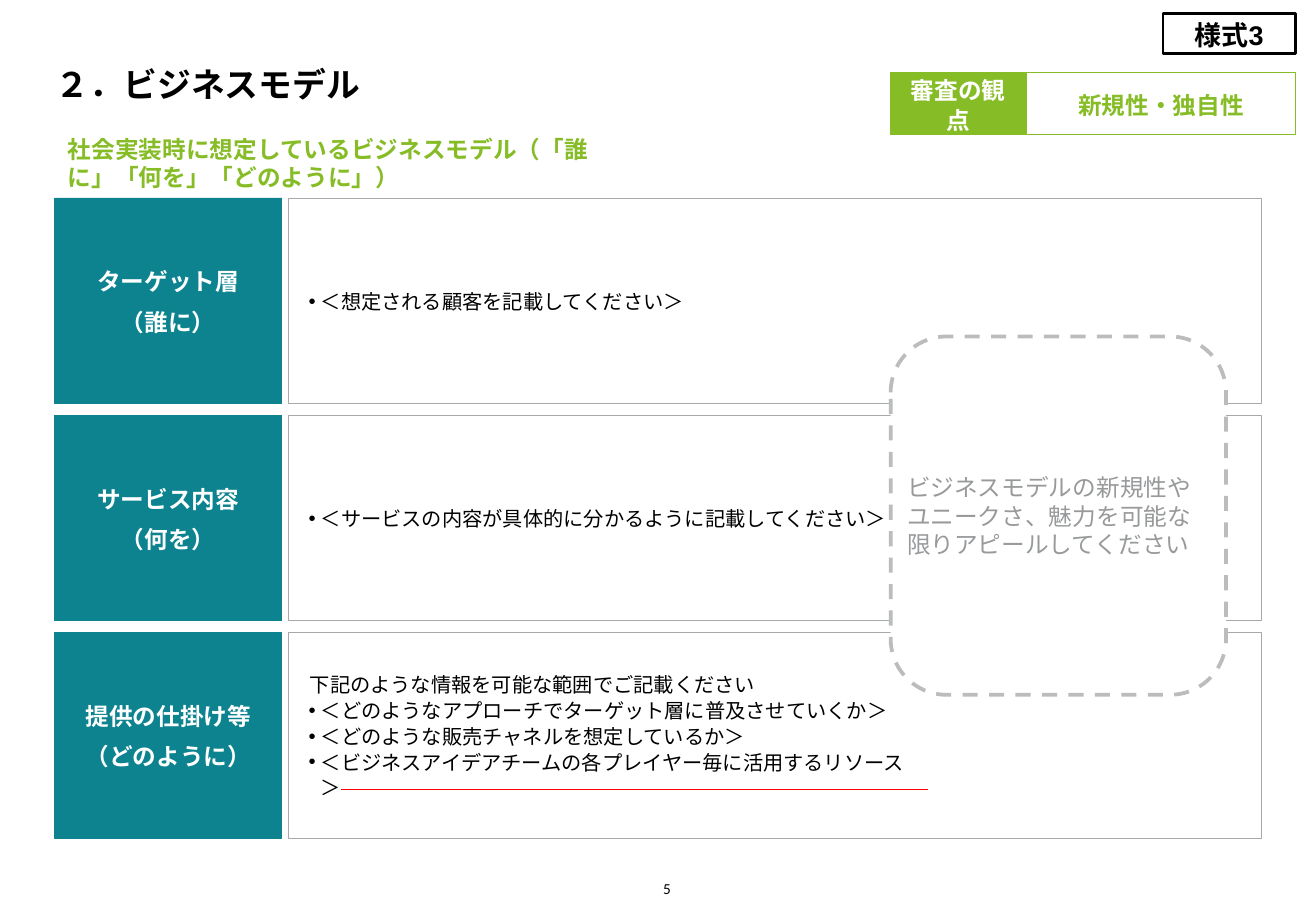
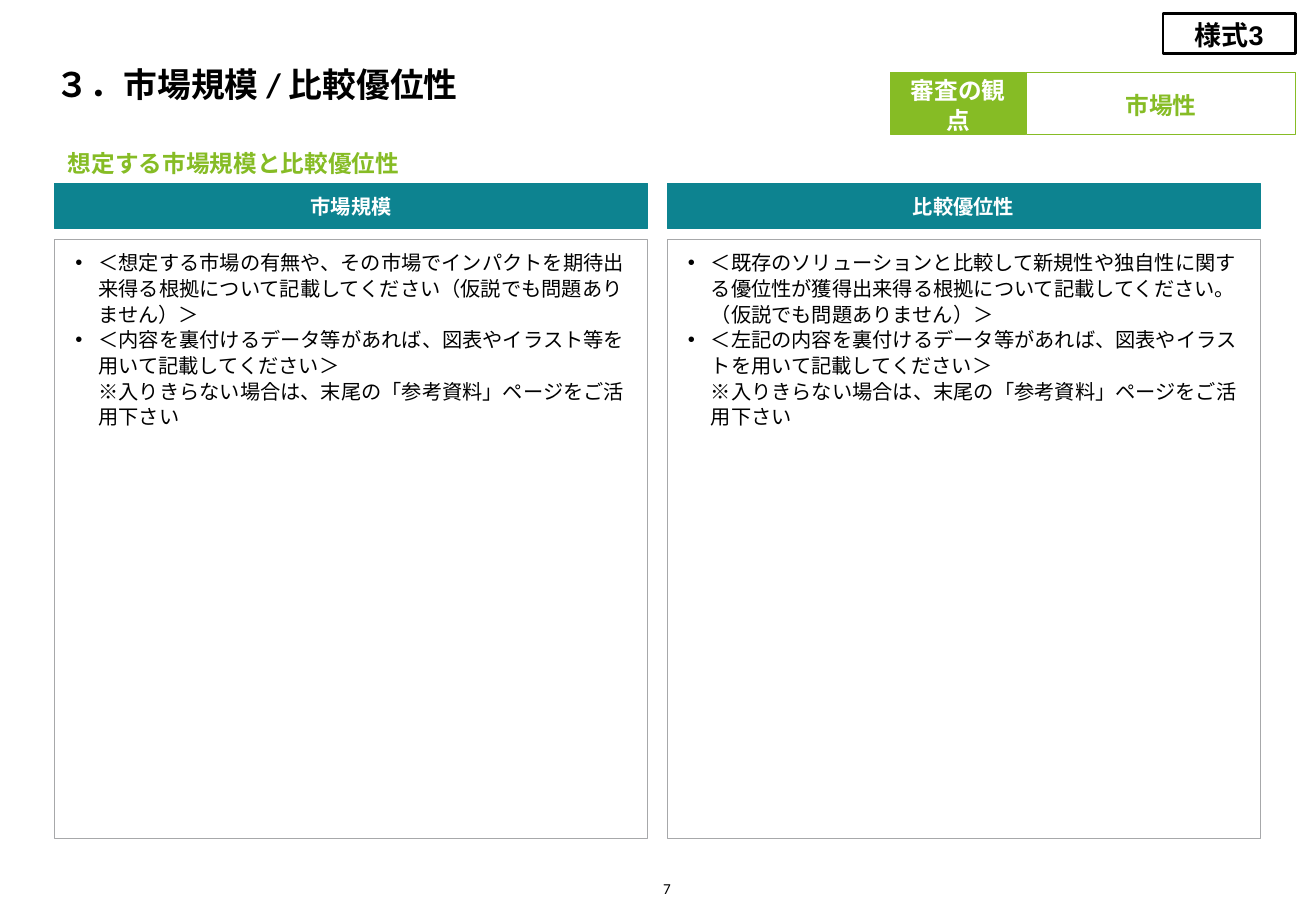
import dataclasses

import lxml.etree
import pptx
import pptx.dml.color
import pptx.enum.dml
import pptx.enum.lang
import pptx.enum.shapes
import pptx.enum.text
import pptx.oxml.ns
import pptx.util

Inches = pptx.util.Inches
Pt = pptx.util.Pt
SHAPE = pptx.enum.shapes.MSO_SHAPE
ALIGN = pptx.enum.text.PP_ALIGN
ANCHOR = pptx.enum.text.MSO_ANCHOR


@dataclasses.dataclass(frozen=True)
class Theme:
    # Colours
    black: str = "000000"
    white: str = "FFFFFF"
    teal: str = "0D8390"
    green: str = "86BC25"
    border: str = "A7A8AA"
    dash: str = "BBBCBC"
    hint: str = "97999B"
    red: str = "FF0000"
    # Type
    heading_font: str = "Calibri"
    body_font: str = "Arial"
    title: int = 20
    form: int = 16
    label: int = 14
    body: int = 12
    number: int = 9
    # Spacing
    leading: float = 1.06
    inset: float = 0.08


def colour(code):
    return pptx.dml.color.RGBColor.from_string(code)


def add_element(parent, tag, **attributes):
    return lxml.etree.SubElement(parent, pptx.oxml.ns.qn(tag), attributes)


class Slides:
    def __init__(self, theme):
        self.theme = theme
        self.deck = pptx.Presentation()
        self.deck.slide_width = Inches(10.83)
        self.deck.slide_height = Inches(7.5)
        self.page = None

    def fill_text(self, box, lines, size, ink, bold=False, font=None, align=ALIGN.LEFT,
                  anchor=ANCHOR.MIDDLE, inset=0.08, leading=None, gap=0, bullet=None,
                  wrap=True):
        """Each line is a paragraph; a newline inside it is a line break."""
        frame = box.text_frame
        frame.word_wrap = wrap
        frame.vertical_anchor = anchor
        side, rise = inset if isinstance(inset, tuple) else (inset, inset)
        frame.margin_left = frame.margin_right = Inches(side)
        frame.margin_top = frame.margin_bottom = Inches(rise)
        for index, line in enumerate(lines):
            para = frame.add_paragraph() if index else frame.paragraphs[0]
            para.alignment = align
            if leading:
                para.line_spacing = leading
            if index and gap:
                para.space_before = Pt(gap)
            if bullet:
                self.indent(para, line, *bullet)
            for part, text in enumerate(line.lstrip("•").split("\n")):
                if part:
                    para.add_line_break()
                self.add_span(para, text, size, ink, bold, font or self.theme.body_font)

    def indent(self, para, line, left, hanging):
        """Lines that start with a bullet hang; others start at the bullet."""
        properties = para._p.get_or_add_pPr()
        if line.startswith("•"):
            properties.set("marL", str(Inches(left)))
            properties.set("indent", str(-Inches(hanging)))
            add_element(properties, "a:buFont", typeface=self.theme.body_font)
            add_element(properties, "a:buChar", char="•")
        else:
            properties.set("marL", str(Inches(hanging)))

    def add_span(self, para, text, size, ink, bold, font):
        span = para.add_run()
        span.text = text
        span.font.size = Pt(size)
        span.font.bold = bold
        span.font.color.rgb = colour(ink)
        span.font.name = font
        span.font.language_id = pptx.enum.lang.MSO_LANGUAGE_ID.JAPANESE
        add_element(span._r.get_or_add_rPr(), "a:ea", typeface=font)

    def text(self, at, line, size, ink, **style):
        box = self.page.shapes.add_textbox(*map(Inches, at))
        self.fill_text(box, [line], size, ink, font=self.theme.heading_font, **style)

    def box(self, at, fill, line, width=0.5, kind=SHAPE.RECTANGLE):
        box = self.page.shapes.add_shape(kind, *map(Inches, at))
        box.shadow.inherit = False
        box.fill.solid()
        box.fill.fore_color.rgb = colour(fill)
        box.line.color.rgb = colour(line)
        box.line.width = Pt(width)
        return box

    def label(self, at, lines, size, fill, line, ink, width=0.5):
        self.fill_text(self.box(at, fill, line, width), lines, size, ink, bold=True,
                       align=ALIGN.CENTER, inset=self.theme.inset,
                       leading=self.theme.leading, gap=6)

    def band(self, at, lines, size):
        self.label(at, lines, size, self.theme.teal, self.theme.teal, self.theme.white)

    def panel(self, at, lines, bullet, anchor=ANCHOR.MIDDLE):
        theme = self.theme
        self.fill_text(self.box(at, theme.white, theme.border), lines, theme.body,
                       theme.black, anchor=anchor, inset=theme.inset,
                       leading=theme.leading, bullet=bullet)

    def callout(self, at, line):
        theme = self.theme
        box = self.box(at, theme.white, theme.dash, 2.25, SHAPE.ROUNDED_RECTANGLE)
        box.line.dash_style = pptx.enum.dml.MSO_LINE.DASH
        self.fill_text(box, [line], theme.label, theme.hint, font=theme.heading_font, inset=0)

    def rule(self, left, right, top, ink):
        line = self.page.shapes.add_connector(
            pptx.enum.shapes.MSO_CONNECTOR.STRAIGHT,
            Inches(left), Inches(top), Inches(right), Inches(top))
        line.line.color.rgb = colour(ink)
        line.line.width = Pt(0.75)
        add_element(line._element.spPr, "a:effectLst")

    def new_page(self, title, subtitle, criterion, number):
        """Start a slide with the parts that every slide has."""
        theme = self.theme
        self.page = self.deck.slides.add_slide(self.deck.slide_layouts[6])
        self.text((0.46, 0.15, 9.92, 0.71), title, theme.title, theme.black,
                  bold=True, anchor=ANCHOR.BOTTOM, inset=0)
        self.text((0.46, 1.11, 4.76, 0.47), subtitle, theme.label, theme.green,
                  bold=True, inset=(0.1, 0.05))
        self.text((5.32, 7.2, 0.2, 0.19), number, theme.number, theme.black,
                  align=ALIGN.RIGHT, anchor=ANCHOR.BOTTOM, inset=0, wrap=False)
        # Judging criterion and form number
        self.label((8.45, 0.6, 2.21, 0.51), [criterion], theme.label,
                   theme.white, theme.green, theme.green)
        self.label((7.33, 0.6, 1.11, 0.51), ["審査の観点"], theme.label,
                   theme.green, theme.green, theme.white)
        self.label((9.57, 0.11, 1.09, 0.33), ["様式3"], theme.form,
                   theme.white, theme.black, theme.black, width=1.5)


def business_model(slides):
    slides.new_page("２．ビジネスモデル",
                    "社会実装時に想定しているビジネスモデル（「誰に」「何を」「どのように」）",
                    "新規性・独自性", "5")
    rows = [
        (["ターゲット層", "（誰に）"], ["•＜想定される顧客を記載してください＞"]),
        (["サービス内容", "（何を）"],
         ["•＜サービスの内容が具体的に分かるように記載してください＞"]),
        (["提供の仕掛け等", "（どのように）"],
         ["下記のような情報を可能な範囲でご記載ください",
          "•＜どのようなアプローチでターゲット層に普及させていくか＞",
          "•＜どのような販売チャネルを想定しているか＞",
          "•＜ビジネスアイデアチームの各プレイヤー毎に活用するリソース\n＞"]),
    ]
    for index, (heading, lines) in enumerate(rows):
        top = 1.63 + 1.79 * index
        slides.band((0.45, top, 1.87, 1.69), heading, slides.theme.label)
        slides.panel((2.37, top, 8.01, 1.69), lines, bullet=(0.19, 0.1))
    slides.rule(2.81, 7.64, 6.5, slides.theme.red)
    slides.callout((7.33, 2.77, 2.76, 2.95),
                   "ビジネスモデルの新規性やユニークさ、魅力を可能な限りアピールしてください")


def market(slides):
    slides.new_page("３．市場規模 / 比較優位性", "想定する市場規模と比較優位性", "市場性", "7")
    note = "\n※入りきらない場合は、末尾の「参考資料」ページをご活用下さい"
    columns = [
        ("市場規模",
         "•＜想定する市場の有無や、その市場でインパクトを期待出来得る根拠について"
         "記載してください（仮説でも問題ありません）＞",
         "•＜内容を裏付けるデータ等があれば、図表やイラスト等を用いて記載してください＞"),
        ("比較優位性",
         "•＜既存のソリューションと比較して新規性や独自性に関する優位性が獲得出来得る"
         "根拠について記載してください。（仮説でも問題ありません）＞",
         "•＜左記の内容を裏付けるデータ等があれば、図表やイラストを用いて記載してください＞"),
    ]
    for index, (heading, reason, evidence) in enumerate(columns):
        left = 0.45 + 5.04 * index
        slides.band((left, 1.51, 4.88, 0.37), [heading], slides.theme.body)
        slides.panel((left, 1.97, 4.88, 4.93), [reason, evidence + note],
                     bullet=(0.28, 0.19), anchor=ANCHOR.TOP)


def main():
    slides = Slides(Theme())
    business_model(slides)
    market(slides)
    slides.deck.save("out.pptx")


if __name__ == "__main__":
    main()
